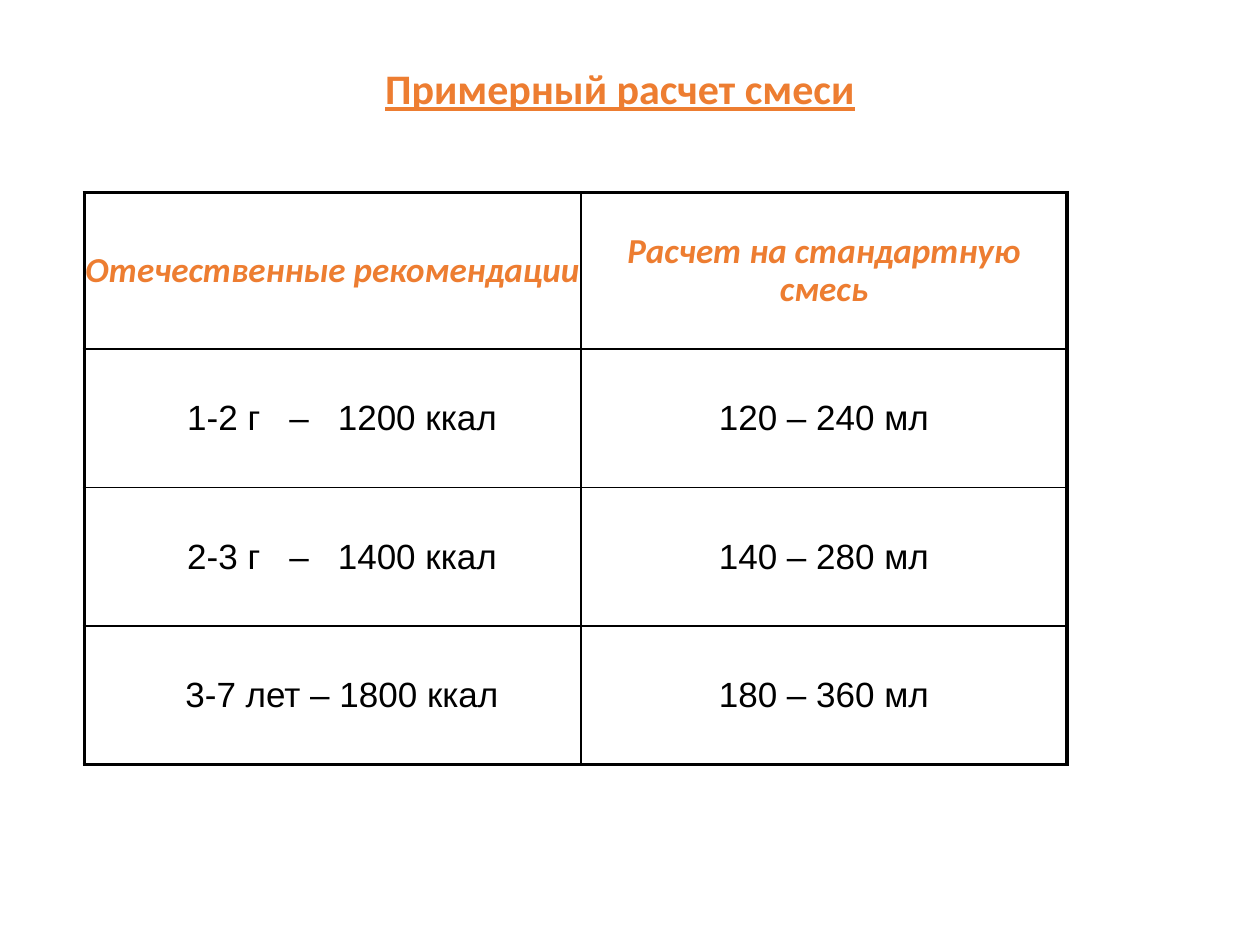
"""Builds a slide with a table of approximate feeding formula volumes by age."""
from dataclasses import dataclass

from lxml.etree import SubElement
from pptx import Presentation
from pptx.dml.color import RGBColor
from pptx.enum.text import MSO_ANCHOR, PP_ALIGN
from pptx.oxml.ns import qn
from pptx.util import Inches, Pt


@dataclass(frozen=True)
class Theme:
    accent: str = "ED7D31"
    ink: str = "000000"
    heading_font: str = "Calibri"
    body_font: str = "Arial"
    title_size: int = 24
    table_size: int = 20
    frame_width: float = 2.25
    grid_width: float = 1
    wide_gap: int = 11


def add_run(paragraph, text, font_name, size, color, **style):
    run = paragraph.add_run()
    run.text = text
    run.font.name, run.font.size = font_name, Pt(size)
    run.font.color.rgb = RGBColor.from_string(color)
    for attribute, value in style.items():
        setattr(run.font, attribute, value)
    return run


def add_border(cell, side, width, color):
    line = SubElement(cell._tc.get_or_add_tcPr(), qn(f"a:{side}"), w=str(Pt(width)))
    SubElement(SubElement(line, qn("a:solidFill")), qn("a:srgbClr"), val=color)


theme = Theme()
presentation = Presentation()
presentation.slide_width, presentation.slide_height = Inches(10), Inches(7.5)
slide = presentation.slides.add_slide(presentation.slide_layouts[6])

title = slide.shapes.add_textbox(Inches(1.77), Inches(0.38), Inches(6.3), Inches(0.71)).text_frame
title.word_wrap = True
title.vertical_anchor = MSO_ANCHOR.MIDDLE
heading = title.paragraphs[0]
heading.alignment, heading.line_spacing = PP_ALIGN.CENTER, 0.8
add_run(heading, "Примерный расчет смеси", theme.heading_font, theme.title_size,
        theme.accent, bold=True, underline=True)

headers = ["Отечественные рекомендации", "Расчет на стандартную смесь"]
feedings = [
    (["1-2 г", " ", "–", " ", "1200 ккал"], "120 – 240 мл"),
    (["2-3 г", " ", "–", " ", "1400 ккал"], "140 – 280 мл"),
    (["3-7 лет – 1800 ккал"], "180 – 360 мл"),
]
rows = [[[header] for header in headers]] + [[energy, [volume]] for energy, volume in feedings]
column_widths = [3.94, 3.86]
row_heights = [1.24] + [1.1] * len(feedings)
last_row, last_column = len(rows) - 1, len(column_widths) - 1

table = slide.shapes.add_table(
    len(rows), len(column_widths), Inches(0.67), Inches(1.53),
    Inches(sum(column_widths)), Inches(sum(row_heights))).table
table.first_row = table.horz_banding = False
for column, width in zip(table.columns, column_widths):
    column.width = Inches(width)
for row, height in zip(table.rows, row_heights):
    row.height = Inches(height)

for r, row in enumerate(rows):
    for c, pieces in enumerate(row):
        cell = table.cell(r, c)
        cell.vertical_anchor = MSO_ANCHOR.MIDDLE
        cell.margin_left = cell.margin_right = cell.margin_top = cell.margin_bottom = 0
        on_frame = {"lnL": c == 0, "lnR": c == last_column, "lnT": r == 0, "lnB": r == last_row}
        for side, framed in on_frame.items():
            add_border(cell, side, theme.frame_width if framed else theme.grid_width, theme.ink)
        cell.fill.background()
        paragraph = cell.text_frame.paragraphs[0]
        paragraph.alignment = PP_ALIGN.CENTER
        if r == 0:
            paragraph.line_spacing = 0.9
            add_run(paragraph, pieces[0], theme.heading_font, theme.table_size,
                    theme.accent, bold=True, italic=True)
            continue
        if c == 0:
            cell.margin_left = Inches(0.15)
        for piece in pieces:
            run = add_run(paragraph, piece, theme.body_font, theme.table_size, theme.ink)
            if piece == " ":
                run.font._element.set("spc", str(theme.wide_gap * 100))

presentation.save("out.pptx")
